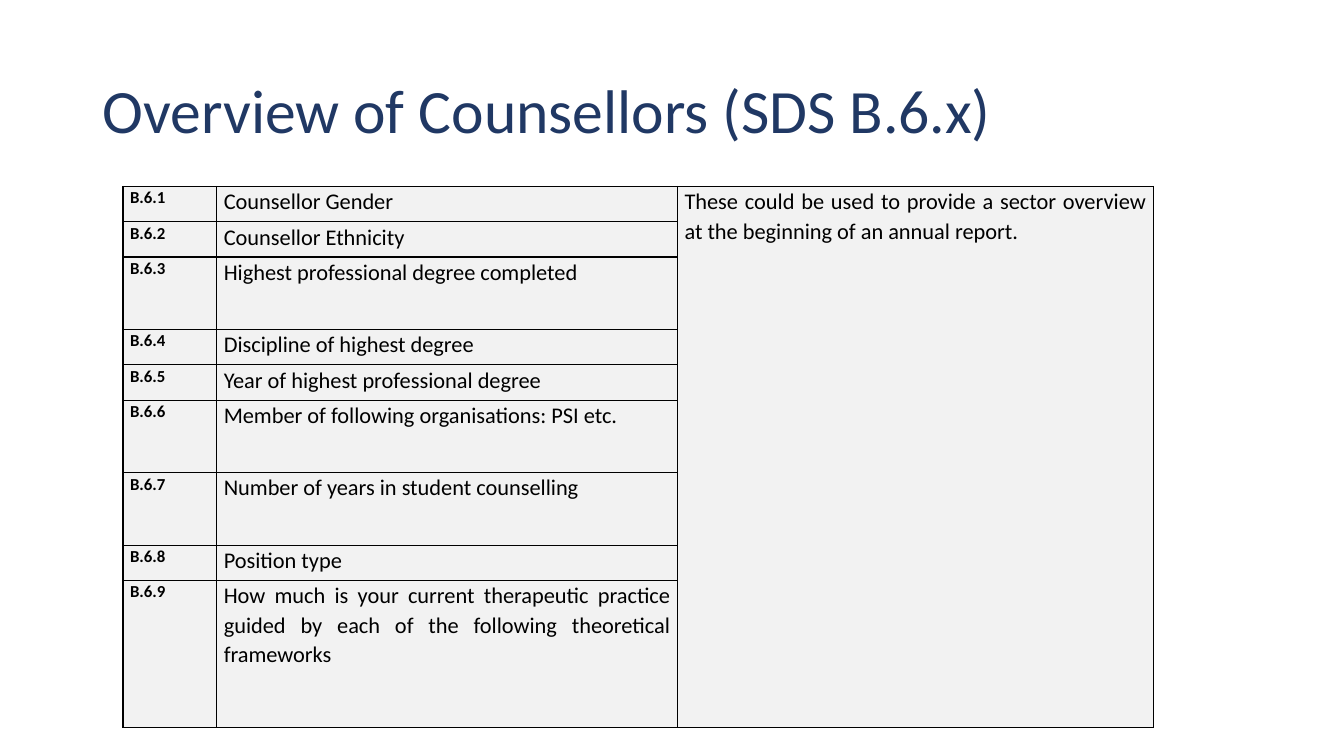
import pptx
import pptx.dml.color
import pptx.enum.text
import pptx.oxml
import pptx.oxml.ns
import pptx.util
from pptx.util import Inches

ALIGN = pptx.enum.text.PP_ALIGN
ANCHOR = pptx.enum.text.MSO_ANCHOR

COLUMN_WIDTHS = [0.93, 4.57, 4.72]
ROW_HEIGHT, TALL_ROW, LAST_ROW = 0.35, 0.72, 1.46
QUESTIONS = [
    ("Counsellor Gender", ROW_HEIGHT),
    ("Counsellor Ethnicity", ROW_HEIGHT),
    ("Highest professional degree completed", TALL_ROW),
    ("Discipline of highest degree", ROW_HEIGHT),
    ("Year of highest professional degree", ROW_HEIGHT),
    ("Member of following organisations: PSI etc.", TALL_ROW),
    ("Number of years in student counselling", TALL_ROW),
    ("Position type", ROW_HEIGHT),
    ("How much is your current therapeutic practice guided by each of "
     "the following theoretical frameworks", LAST_ROW),
]
USAGE = ("These could be used to provide a sector overview "
         "at the beginning of an annual report.")


def color(hex_code):
    """Return the RGB colour for a hex string."""
    return pptx.dml.color.RGBColor.from_string(hex_code)


def write(frame, text, size=16, bold=False, ink="000000",
          align=ALIGN.JUSTIFY, spacing=1.07):
    """Write one formatted paragraph into a text frame."""
    frame.word_wrap = True
    paragraph = frame.paragraphs[0]
    paragraph.alignment = align
    paragraph.line_spacing = spacing
    run = paragraph.add_run()
    run.text = text
    run.font.name = "Calibri"
    run.font.size = pptx.util.Pt(size)
    run.font.bold = bold
    run.font.color.rgb = color(ink)


def style_cell(cell):
    """Give a cell thin black borders, a grey fill and narrow margins."""
    properties = cell._tc.get_or_add_tcPr()
    for side in ("lnL", "lnR", "lnT", "lnB"):
        properties.append(pptx.oxml.parse_xml(
            f'<a:{side} {pptx.oxml.ns.nsdecls("a")} w="12700"><a:solidFill>'
            f'<a:srgbClr val="000000"/></a:solidFill></a:{side}>'))
    cell.fill.solid()
    cell.fill.fore_color.rgb = color("F2F2F2")
    cell.margin_left = cell.margin_right = Inches(0.07)
    cell.margin_top = cell.margin_bottom = 0


def add_title(slide, text):
    """Add the slide heading."""
    heading = slide.shapes.add_textbox(
        Inches(0.92), Inches(0.4), Inches(11.5), Inches(1.45))
    heading.text_frame.vertical_anchor = ANCHOR.MIDDLE
    write(heading.text_frame, text, size=44, ink="203864",
          align=ALIGN.LEFT, spacing=0.9)


def add_question_table(slide):
    """Add the numbered questions beside one merged usage note."""
    heights = [height for _, height in QUESTIONS]
    table = slide.shapes.add_table(
        len(QUESTIONS), len(COLUMN_WIDTHS), Inches(1.22), Inches(1.85),
        Inches(sum(COLUMN_WIDTHS)), Inches(sum(heights))).table
    table.first_row = table.horz_banding = False
    for column, width in zip(table.columns, COLUMN_WIDTHS):
        column.width = Inches(width)
    for row, height in zip(table.rows, heights):
        row.height = Inches(height)
    for cell in table.iter_cells():
        style_cell(cell)
    for index, (question, _) in enumerate(QUESTIONS):
        write(table.cell(index, 0).text_frame, f"B.6.{index + 1}",
              size=12, bold=True)
        write(table.cell(index, 1).text_frame, question)
    usage_cell = table.cell(0, 2)
    usage_cell.merge(table.cell(len(QUESTIONS) - 1, 2))
    write(usage_cell.text_frame, USAGE)


def main():
    """Build and save the slide."""
    deck = pptx.Presentation()
    deck.slide_width, deck.slide_height = Inches(13.33), Inches(7.5)
    slide = deck.slides.add_slide(deck.slide_layouts[6])
    add_title(slide, "Overview of Counsellors (SDS B.6.x)")
    add_question_table(slide)
    deck.save("out.pptx")


if __name__ == "__main__":
    main()
